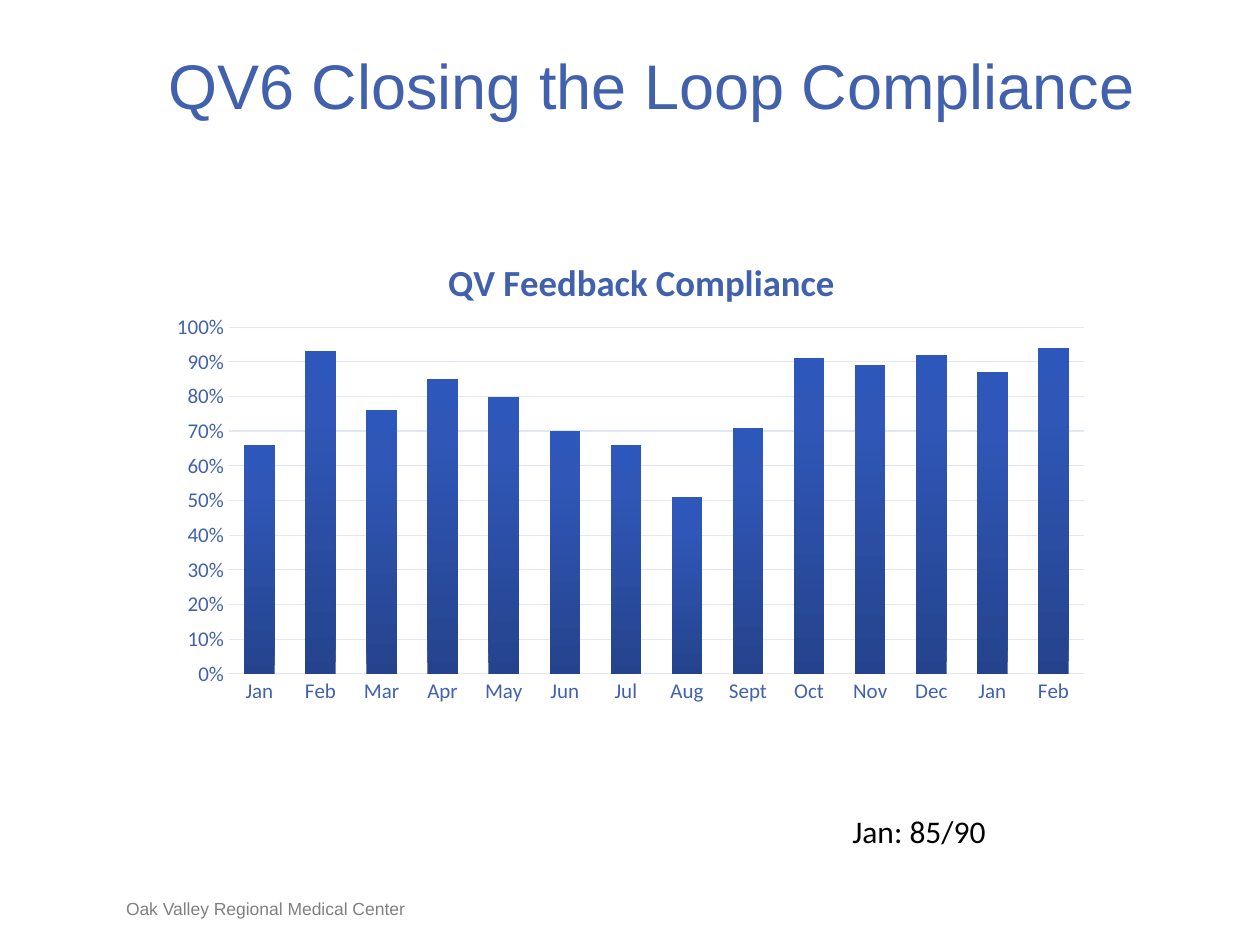
from lxml import etree
from pptx import Presentation
from pptx.chart.data import CategoryChartData
from pptx.dml.color import RGBColor
from pptx.enum.chart import XL_CHART_TYPE, XL_TICK_MARK
from pptx.enum.text import MSO_ANCHOR, PP_ALIGN
from pptx.oxml import parse_xml
from pptx.oxml.ns import nsdecls, qn
from pptx.util import Pt

PX = 914400 // 126
COLUMN = XL_CHART_TYPE.COLUMN_CLUSTERED
NO_TICK = XL_TICK_MARK.NONE
TOP, BOTTOM = MSO_ANCHOR.TOP, MSO_ANCHOR.BOTTOM
LEFT, CENTER = PP_ALIGN.LEFT, PP_ALIGN.CENTER
BLUE, PALE = "4261AD", "E2E7F4"


def style(font, name, size, color, bold=False):
    font.name = name
    font.size = Pt(size)
    font.bold = bold
    font.color.rgb = RGBColor.from_string(color)


def place(parent, index, **parts):
    layout = parse_xml(f"<c:layout {nsdecls('c')}><c:manualLayout/></c:layout>")
    for tag, val in parts.items():
        etree.SubElement(layout[0], qn(f"c:{tag}")).set("val", str(val))
    for old in parent.findall(qn("c:layout")):
        parent.remove(old)
    parent.insert(index, layout)


prs = Presentation()
prs.slide_width = 1260 * PX
prs.slide_height = 945 * PX
slide = prs.slides.add_slide(prs.slide_layouts[6])

texts = [
    ("Oak Valley Regional Medical Center", (126, 897, 400, 22), 0, BOTTOM, LEFT, "Arial", 10, "808080"),
    ("QV6 Closing the Loop Compliance", (116, 45, 1071, 77), 0, BOTTOM, CENTER, "Arial", 36, BLUE),
    ("Jan: 85/90", (840, 806, 325, 50), None, TOP, LEFT, "Calibri", 18, "000000"),
]
for text, box, inset, anchor, align, name, size, color in texts:
    frame = slide.shapes.add_textbox(*[n * PX for n in box]).text_frame
    frame.word_wrap = True
    frame.vertical_anchor = anchor
    if inset is not None:
        frame.margin_left = frame.margin_right = inset
        frame.margin_top = frame.margin_bottom = inset
    frame.text = text
    para = frame.paragraphs[0]
    para.alignment = align
    style(para.runs[0].font, name, size, color)

data = CategoryChartData(number_format="0%")
data.categories = ["Jan", "Feb", "Mar", "Apr", "May", "Jun", "Jul",
                   "Aug", "Sept", "Oct", "Nov", "Dec", "Jan", "Feb"]
data.add_series("Series 1", [0.66, 0.93, 0.76, 0.85, 0.8, 0.7, 0.66,
                             0.51, 0.71, 0.91, 0.89, 0.92, 0.87, 0.94])
box = [n * PX for n in (158, 220, 945, 494)]
chart = slide.shapes.add_chart(COLUMN, *box, data).chart
style(chart.font, "Calibri", 10, "000000")
chart.has_legend = False

chart.has_title = True
title = chart.chart_title
title.text_frame.text = "QV Feedback Compliance"
style(title.text_frame.paragraphs[0].runs[0].font, "Calibri", 21, BLUE, True)
title.include_in_layout = False
place(title._element, 1, xMode="edge", yMode="edge", x=0.3, y=0.06)
place(chart._chartSpace.chart.plotArea, 0, layoutTarget="inner", xMode="edge",
      yMode="edge", x=0.075, y=0.217, w=0.905, h=0.702)

cat, val = chart.category_axis, chart.value_axis
val.minimum_scale, val.maximum_scale, val.major_unit = 0, 1, 0.1
val.has_major_gridlines = True
val.tick_labels.number_format = "0%"
val.tick_labels.number_format_is_linked = False
val.format.line.fill.background()
for axis in (cat, val):
    axis.major_tick_mark = axis.minor_tick_mark = NO_TICK
    style(axis.tick_labels.font, "Calibri", 12, BLUE)
for line in (cat.format.line, val.major_gridlines.format.line):
    line.color.rgb = RGBColor.from_string(PALE)
    line.width = Pt(0.75)

plot = chart.plots[0]
plot.gap_width = 100
plot.overlap = -24
plot.vary_by_categories = False
bars = plot.series[0]
bars.invert_if_negative = False
fill = bars.format.fill
fill.gradient()
grad = bars._element.spPr.find(qn("a:gradFill"))
stops = grad.find(qn("a:gsLst"))
for stop in list(stops):
    stops.remove(stop)
for spot, color in ((0, "25438D"), (80, "3057B7"), (100, "2E57BB")):
    stop = etree.SubElement(stops, qn("a:gs"), pos=str(spot * 1000))
    etree.SubElement(stop, qn("a:srgbClr"), val=color)
grad.find(qn("a:lin")).set("ang", "16200000")

prs.save("out.pptx")
